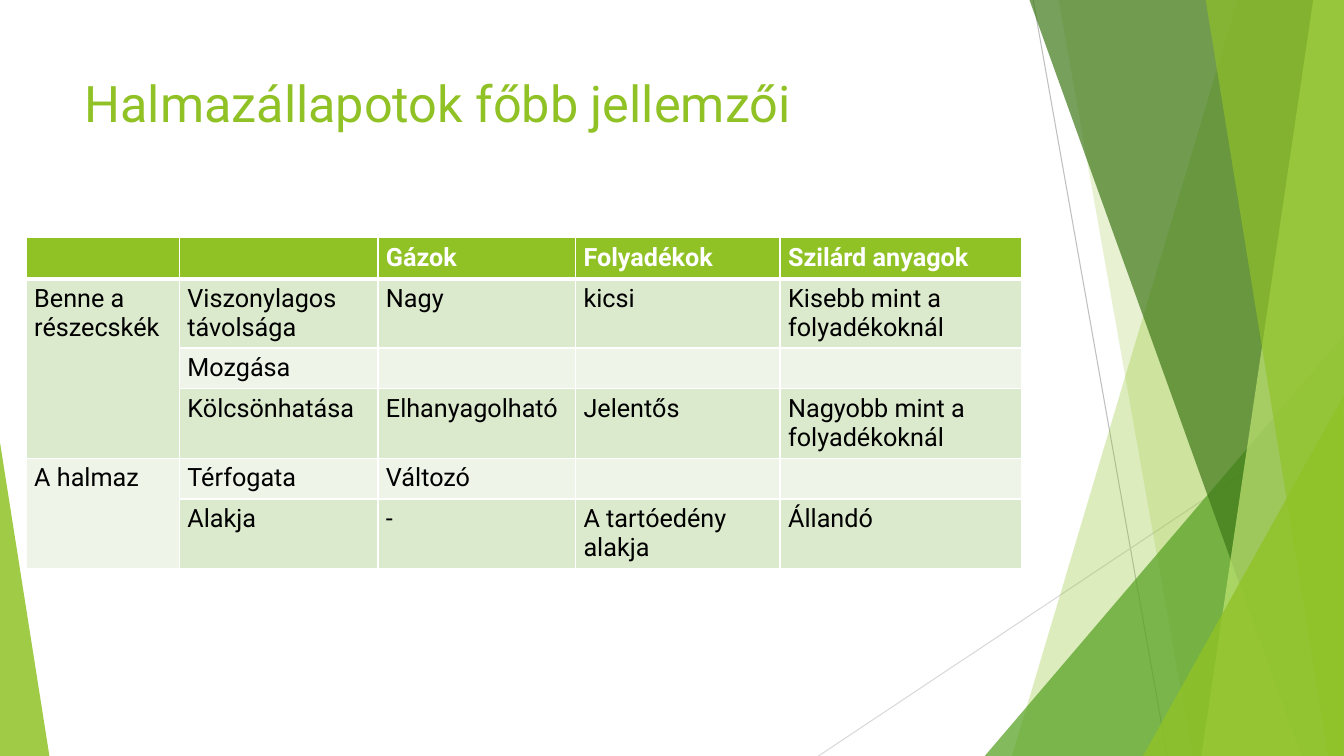
from lxml.etree import SubElement
from pptx import Presentation
from pptx.dml.color import RGBColor as RGB
from pptx.enum.shapes import MSO_CONNECTOR as CONN, MSO_SHAPE as SHAPE
from pptx.enum.text import MSO_ANCHOR as ANCHOR, MSO_AUTO_SIZE as AUTO, PP_ALIGN as ALIGN
from pptx.oxml.ns import qn
from pptx.util import Pt

W, H = 960, 540
COLORS = {
    "lime": "90C226", "green": "54A021", "forest": "3F7819", "pale": "C0E474",
    "band": "DBE9CD", "light": "EEF4E8", "white": "FFFFFF", "black": "000000",
    "gray": "BFBFBF", "silver": "D9D9D9",
}
LINES = [(738, 0, 833.76, H, "gray"), (W, 290.16, 584.64, H, "silver")]
BACK_PANELS = [(884.16, 722.88, "lime", 30), (756, 851.76, "lime", 20)]
FRONT_PANELS = [
    (735.12, 929.52, "forest", 70),
    (938.16, 858.24, "pale", 70),
    (861.12, 948.96, "lime", 65),
]
COLS = [109.44, 141.84, 141.12, 146.16, 172.8]
ROWS = [29.2, 49.3] * 3
CELLS = [
    ["", "", "Gázok", "Folyadékok", "Szilárd anyagok"],
    ["Benne a részecskék", "Viszonylagos távolsága", "Nagy", "kicsi", "Kisebb mint a folyadékoknál"],
    ["", "Mozgása", "", "", ""],
    ["", "Kölcsönhatása", "Elhanyagolható", "Jelentős", "Nagyobb mint a folyadékoknál"],
    ["A halmaz", "Térfogata", "Változó", "", ""],
    ["", "Alakja", "-", "A tartóedény alakja", "Állandó"],
]
MERGES = [(1, 3), (4, 5)]


class Deck:
    font = "Roboto"

    def __init__(self):
        self.prs = Presentation()
        self.prs.slide_width, self.prs.slide_height = Pt(W), Pt(H)
        self.s = self.prs.slides.add_slide(self.prs.slide_layouts[5])

    def rgb(self, color):
        return RGB.from_string(COLORS[color])

    def assign(self, obj, values):
        for name, value in values.items():
            setattr(obj, name, value)

    def text(self, tf, text, size, color, bold=False):
        p = tf.paragraphs[0]
        p.alignment = ALIGN.LEFT
        r = p.add_run()
        r.text = text
        self.assign(r.font, {"name": self.font, "size": Pt(size), "bold": bold})
        r.font.color.rgb = self.rgb(color)

    def paint(self, sp, color, opacity):
        sp.shadow.inherit = False
        sp.line.fill.background()
        sp.fill.solid()
        sp.fill.fore_color.rgb = self.rgb(color)
        srgb = sp._element.spPr.find(qn("a:solidFill")).find(qn("a:srgbClr"))
        SubElement(srgb, qn("a:alpha"), val=str(opacity * 1000))

    def line(self, x1, y1, x2, y2, color):
        c = self.s.shapes.add_connector(CONN.STRAIGHT, Pt(x1), Pt(y1), Pt(x2), Pt(y2))
        c.line.width = Pt(0.75)
        c.line.color.rgb = self.rgb(color)
        SubElement(c._element.spPr, qn("a:effectLst"))

    def panel(self, top_x, bottom_x, color, opacity):
        top = -0.72
        fb = self.s.shapes.build_freeform(Pt(top_x), Pt(top))
        corners = [(W, top), (W, H), (bottom_x, H)]
        fb.add_line_segments([(Pt(x), Pt(y)) for x, y in corners], close=True)
        self.paint(fb.convert_to_shape(), color, opacity)

    def triangle(self, x, y, w, apex, color, opacity):
        sp = self.s.shapes.add_shape(SHAPE.ISOSCELES_TRIANGLE, Pt(x), Pt(y), Pt(w), Pt(H - y))
        sp.adjustments[0] = apex
        self.paint(sp, color, opacity)

    def title(self, text, x, y, w, h):
        sp = self.s.shapes.title
        self.assign(sp, {"left": Pt(x), "top": Pt(y), "width": Pt(w), "height": Pt(h)})
        tf = sp.text_frame
        self.assign(tf, {"word_wrap": True, "auto_size": AUTO.NONE, "vertical_anchor": ANCHOR.TOP})
        self.text(tf, text, 36, "lime")

    def border(self, cell, side, width):
        ln = SubElement(cell._tc.get_or_add_tcPr(), qn("a:" + side), w=str(Pt(width)))
        fill = SubElement(ln, qn("a:solidFill"))
        SubElement(fill, qn("a:srgbClr"), val=COLORS["white"])

    def cell(self, cell, text, row, fill):
        header = row == 0
        self.assign(cell, {
            "margin_left": Pt(5.76), "margin_right": Pt(5.76),
            "margin_top": Pt(3.6), "margin_bottom": Pt(3.6),
            "vertical_anchor": ANCHOR.TOP,
        })
        for side in ("lnL", "lnR", "lnT", "lnB"):
            thick = (row, side) in ((0, "lnB"), (1, "lnT"))
            self.border(cell, side, 3 if thick else 1)
        cell.fill.solid()
        cell.fill.fore_color.rgb = self.rgb(fill)
        if text:
            self.text(cell.text_frame, text, 18, "white" if header else "black", header)

    def table(self, x, y):
        frame = self.s.shapes.add_table(len(ROWS), len(COLS), Pt(x), Pt(y), Pt(sum(COLS)), Pt(sum(ROWS)))
        t = frame.table
        for col, w in zip(t.columns, COLS):
            col.width = Pt(w)
        for row, h in zip(t.rows, ROWS):
            row.height = Pt(h)
        for i, texts in enumerate(CELLS):
            fill = "lime" if i == 0 else ("light", "band")[i % 2]
            for j, text in enumerate(texts):
                self.cell(t.cell(i, j), text, i, fill)
        for first, last in MERGES:
            t.cell(first, 0).merge(t.cell(last, 0))


def main():
    d = Deck()
    for line in LINES:
        d.line(*line)
    for panel in BACK_PANELS:
        d.panel(*panel)
    d.triangle(703.44, 239.76, 256.32, 1, "green", 72)
    for panel in FRONT_PANELS:
        d.panel(*panel)
    d.triangle(816.48, 282.96, 143.28, 1, "lime", 80)
    d.triangle(0, 316.08, 35.28, 0, "lime", 85)
    d.title("Halmazállapotok főbb jellemzői", 53.28, 48.24, 676.8, 103.68)
    d.table(18.72, 169.92)
    d.prs.save("out.pptx")


if __name__ == "__main__":
    main()
